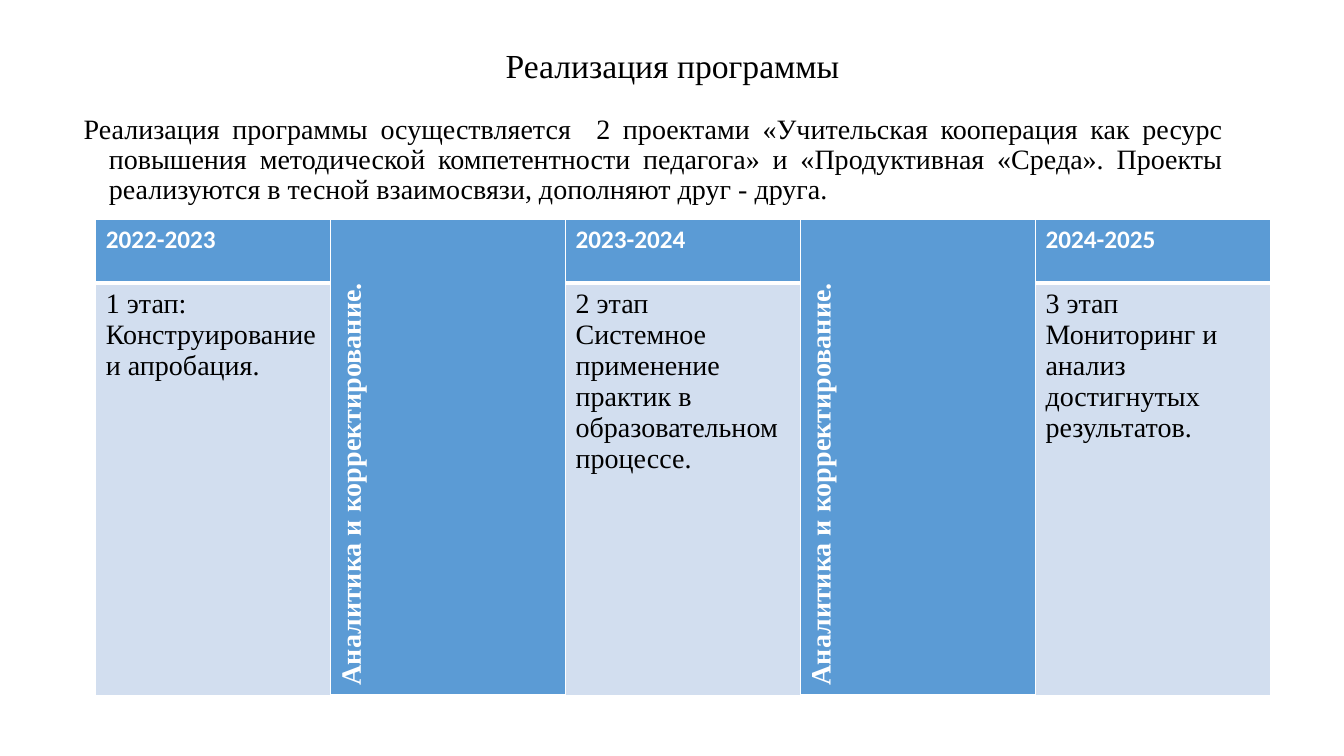
"""Build the slide on the stages of the programme."""
from lxml.etree import SubElement
from pptx import Presentation
from pptx.dml.color import RGBColor
from pptx.enum.text import MSO_ANCHOR, MSO_AUTO_SIZE, PP_ALIGN
from pptx.oxml import parse_xml
from pptx.oxml.ns import qn
from pptx.util import Inches, Pt

TITLE = "Реализация программы"
BODY = (
    "Реализация программы осуществляется  2 проектами «Учительская кооперация "
    "как ресурс повышения методической компетентности педагога» и "
    "«Продуктивная «Среда». Проекты реализуются в тесной взаимосвязи, "
    "дополняют друг - друга."
)
REVIEW = "Аналитика и корректирование."
STAGES = [
    ("2022-2023", ["1 этап:", "Конструирование и апробация."]),
    ("2023-2024", ["2 этап", "Системное применение практик в образовательном процессе."]),
    ("2024-2025", ["3 этап", "Мониторинг и анализ достигнутых результатов."]),
]
BLUE, PALE, WHITE, BLACK = "5B9BD5", "D2DEEF", "FFFFFF", "000000"
SERIF, SANS = "Times New Roman", "Calibri"
TABLE_LEFT, TABLE_TOP, COLUMN_WIDTH = 0.95, 2.18, 2.33
ROW_HEIGHTS = [0.63, 2.97]
NAMESPACE = "http://schemas.openxmlformats.org/drawingml/2006/main"


def color(value):
    return RGBColor.from_string(value)


def write(frame, lines, size=20, font=SERIF, ink=BLACK, bold=False,
          align=PP_ALIGN.LEFT, spacing=None, hanging=None):
    for index, line in enumerate(lines):
        paragraph = frame.paragraphs[0] if index == 0 else frame.add_paragraph()
        paragraph.alignment = align
        if spacing:
            paragraph.line_spacing = spacing
            paragraph.space_before = Pt(0)
        if hanging:
            properties = paragraph._p.get_or_add_pPr()
            properties.set("marL", str(Inches(hanging)))
            properties.set("indent", str(-Inches(hanging)))
            SubElement(properties, qn("a:buNone"))
        run = paragraph.add_run()
        run.text = line
        run.font.size, run.font.name, run.font.bold = Pt(size), font, bold
        run.font.color.rgb = color(ink)


def place(shape, left, top, width, height, anchor):
    shape.left, shape.top = Inches(left), Inches(top)
    shape.width, shape.height = Inches(width), Inches(height)
    shape.text_frame.auto_size = MSO_AUTO_SIZE.NONE
    shape.text_frame.vertical_anchor = anchor
    return shape.text_frame


def style_cell(cell, fill, top=1, bottom=1):
    cell.fill.solid()
    cell.fill.fore_color.rgb = color(fill)
    sides = [("lnL", 1), ("lnR", 1), ("lnT", top), ("lnB", bottom)]
    for index, (side, width) in enumerate(sides):
        border = parse_xml(
            f'<a:{side} xmlns:a="{NAMESPACE}" w="{Pt(width)}"><a:solidFill>'
            f'<a:srgbClr val="{WHITE}"/></a:solidFill></a:{side}>'
        )
        cell._tc.get_or_add_tcPr().insert(index, border)


def add_stage_table(slide):
    count = 2 * len(STAGES) - 1
    table = slide.shapes.add_table(
        2, count, Inches(TABLE_LEFT), Inches(TABLE_TOP),
        Inches(COLUMN_WIDTH * count), Inches(sum(ROW_HEIGHTS)),
    ).table
    table.horz_banding = False
    for row, height in zip(table.rows, ROW_HEIGHTS):
        row.height = Inches(height)
    for index, column in enumerate(table.columns):
        column.width = Inches(COLUMN_WIDTH)
        header, body = table.cell(0, index), table.cell(1, index)
        style_cell(header, BLUE, bottom=3)
        if index % 2:
            style_cell(body, BLUE)
            header.merge(body)
            header._tc.get_or_add_tcPr().set("vert", "vert270")
            write(header.text_frame, [REVIEW], ink=WHITE, bold=True)
        else:
            years, lines = STAGES[index // 2]
            style_cell(body, PALE, top=3)
            write(header.text_frame, [years], size=18, font=SANS, ink=WHITE, bold=True)
            write(body.text_frame, lines)


def main():
    presentation = Presentation()
    presentation.slide_width, presentation.slide_height = Inches(13.33), Inches(7.5)
    slide = presentation.slides.add_slide(presentation.slide_layouts[1])
    title = place(slide.shapes.title, 0.92, 0.4, 11.5, 0.55, MSO_ANCHOR.MIDDLE)
    write(title, [TITLE], size=24, align=PP_ALIGN.CENTER, spacing=0.9)
    body = place(slide.placeholders[1], 0.73, 1.09, 11.5, 1.03, MSO_ANCHOR.TOP)
    write(body, [BODY], align=PP_ALIGN.JUSTIFY, spacing=0.9, hanging=0.25)
    add_stage_table(slide)
    presentation.save("out.pptx")


if __name__ == "__main__":
    main()
